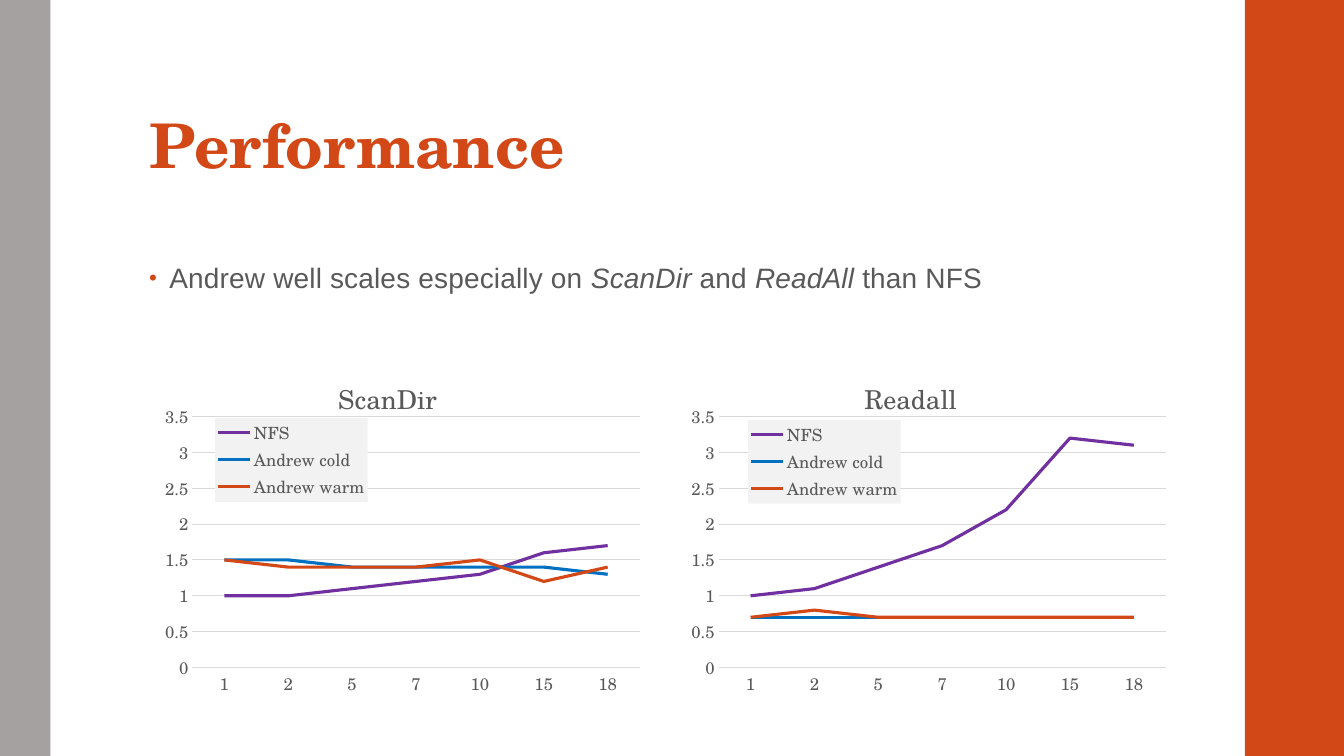
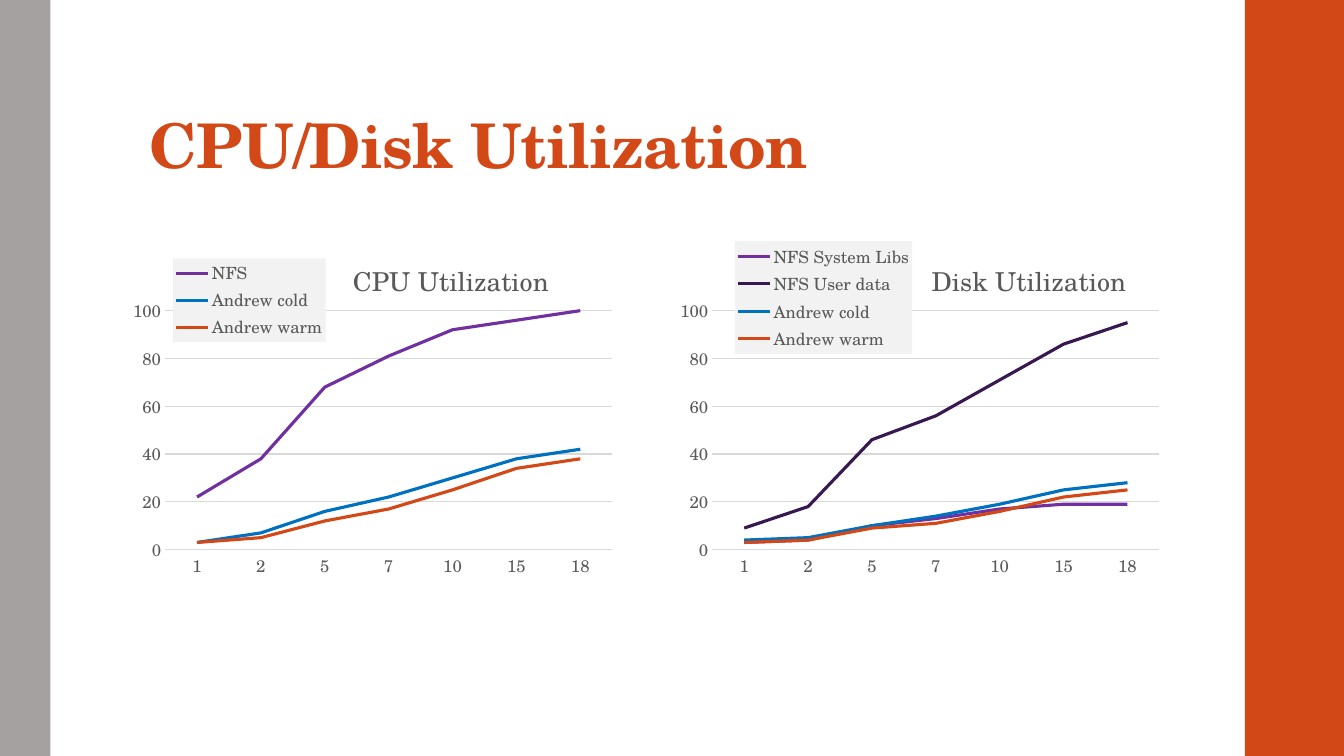
from lxml.etree import SubElement
from pptx import Presentation
from pptx.chart.data import CategoryChartData
from pptx.dml.color import RGBColor
from pptx.enum.chart import XL_CHART_TYPE, XL_LEGEND_POSITION, XL_TICK_MARK
from pptx.enum.shapes import MSO_SHAPE
from pptx.enum.text import MSO_ANCHOR
from pptx.oxml import parse_xml
from pptx.oxml.ns import qn
from pptx.util import Cm, Pt

ORANGE, GRAY, TEXT, GRID = "D34817", "A6A1A1", "595959", "D9D9D9"
PURPLE, DARK_PURPLE, BLUE = "7030A0", "381850", "0070C0"
SERIF, SANS = "TeX Gyre Schola", "Arial"
CHART_NS = "http://schemas.openxmlformats.org/drawingml/2006/chart"
DRAWING_NS = "http://schemas.openxmlformats.org/drawingml/2006/main"
LEGEND_FILL = (
    f'<c:spPr xmlns:c="{CHART_NS}" xmlns:a="{DRAWING_NS}">'
    '<a:solidFill><a:srgbClr val="F2F2F2"/></a:solidFill></c:spPr>'
)


def style(font, size, color=TEXT, name=SERIF):
    font.size = Pt(size)
    font.name = name
    font.color.rgb = RGBColor.from_string(color)


def set_layout(part, index, **fractions):
    for old in part.findall(qn("c:layout")):
        part.remove(old)
    layout = parse_xml(f'<c:layout xmlns:c="{CHART_NS}"/>')
    manual = SubElement(layout, qn("c:manualLayout"))
    if index == 0:
        SubElement(manual, qn("c:layoutTarget")).set("val", "inner")
    for axis in "xy":
        SubElement(manual, qn(f"c:{axis}Mode")).set("val", "edge")
    for key, value in fractions.items():
        SubElement(manual, qn(f"c:{key}")).set("val", str(value))
    part.insert(index, layout)


USERS = ["1", "2", "5", "7", "10", "15", "18"]
TITLE_Y = 0.04
SLIDES = [
    {
        "title": "Performance", "spacing": -10, "top": 9.02, "max": 3.5, "step": 0.5,
        "charts": [
            {
                "title": "ScanDir", "left": 3.1, "title_x": 0.4,
                "legend_at": (0.175, 0.165, 0.29, 0.23),
                "series": [
                    ("NFS", PURPLE, [1, 1, 1.1, 1.2, 1.3, 1.6, 1.7]),
                    ("Andrew cold", BLUE, [1.5, 1.5, 1.4, 1.4, 1.4, 1.4, 1.3]),
                    ("Andrew warm", ORANGE, [1.5, 1.4, 1.4, 1.4, 1.5, 1.2, 1.4]),
                ],
            },
            {
                "title": "Readall", "left": 16.36, "title_x": 0.4,
                "legend_at": (0.188, 0.17, 0.29, 0.23),
                "series": [
                    ("NFS", PURPLE, [1, 1.1, 1.4, 1.7, 2.2, 3.2, 3.1]),
                    ("Andrew cold", BLUE, [0.7] * 7),
                    ("Andrew warm", ORANGE, [0.7, 0.8, 0.7, 0.7, 0.7, 0.7, 0.7]),
                ],
            },
        ],
    },
    {
        "title": "CPU/Disk Utilization", "spacing": -50, "top": 6.05, "max": 105, "step": 20,
        "charts": [
            {
                "title": "CPU Utilization", "left": 2.41, "title_x": 0.48,
                "legend_at": (0.147, 0.05, 0.29, 0.23),
                "series": [
                    ("NFS", PURPLE, [22, 38, 68, 81, 92, 96, 100]),
                    ("Andrew cold", BLUE, [3, 7, 16, 22, 30, 38, 42]),
                    ("Andrew warm", ORANGE, [3, 5, 12, 17, 25, 34, 38]),
                ],
            },
            {
                "title": "Disk Utilization", "left": 16.2, "title_x": 0.54,
                "legend_at": (0.175, 0.003, 0.337, 0.31),
                "series": [
                    ("NFS System Libs", PURPLE, [3, 4, 10, 13, 17, 19, 19]),
                    ("NFS User data", DARK_PURPLE, [9, 18, 46, 56, 71, 86, 95]),
                    ("Andrew cold", BLUE, [4, 5, 10, 14, 19, 25, 28]),
                    ("Andrew warm", ORANGE, [3, 4, 9, 11, 16, 22, 25]),
                ],
            },
        ],
    },
]

prs = Presentation()
prs.slide_width, prs.slide_height = Cm(33.87), Cm(19.05)

for content in SLIDES:
    slide = prs.slides.add_slide(prs.slide_layouts[6])

    for left, width, color in [(31.37, 2.5, ORANGE), (0, 1.27, GRAY)]:
        band = slide.shapes.add_shape(MSO_SHAPE.RECTANGLE, Cm(left), 0, Cm(width), prs.slide_height)
        band.shadow.inherit = False
        band.fill.solid()
        band.fill.fore_color.rgb = RGBColor.from_string(color)
        band.line.fill.background()

    heading = slide.shapes.add_textbox(Cm(3.52), Cm(0.81), Cm(26.92), Cm(3.89)).text_frame
    heading.word_wrap = True
    heading.vertical_anchor = MSO_ANCHOR.BOTTOM
    heading.margin_top = Cm(0.08)
    title = heading.paragraphs[0]
    title.line_spacing = 0.9
    title_run = title.add_run()
    title_run.text = content["title"]
    title_run._r.get_or_add_rPr().set("spc", str(content["spacing"]))
    style(title.font, 44, ORANGE)
    title.font.bold = True

    for plan in content["charts"]:
        data = CategoryChartData()
        data.categories = USERS
        for name, color, values in plan["series"]:
            data.add_series(name, values)
        chart = slide.shapes.add_chart(
            XL_CHART_TYPE.LINE, Cm(plan["left"]), Cm(content["top"]), Cm(13.26), Cm(9.18), data
        ).chart
        style(chart.font, 12)

        chart.has_title = True
        caption = chart.chart_title.text_frame.paragraphs[0]
        caption.text = plan["title"]
        style(caption.font, 18.6)
        caption.font.bold = False

        chart.has_legend = True
        legend = chart.legend
        legend.position = XL_LEGEND_POSITION.RIGHT
        legend.include_in_layout = False
        style(legend.font, 12)
        legend._element.find(qn("c:txPr")).addprevious(parse_xml(LEGEND_FILL))

        users, scale = chart.category_axis, chart.value_axis
        for axis in (users, scale):
            axis.major_tick_mark = axis.minor_tick_mark = XL_TICK_MARK.NONE
            style(axis.tick_labels.font, 12)
        scale.minimum_scale = 0
        scale.maximum_scale = content["max"]
        scale.major_unit = content["step"]
        scale.format.line.fill.background()
        for line in (users.format.line, scale.major_gridlines.format.line):
            line.color.rgb = RGBColor.from_string(GRID)
            line.width = Pt(0.75)

        for series, (name, color, values) in zip(chart.plots[0].series, plan["series"]):
            series.smooth = False
            series.format.line.color.rgb = RGBColor.from_string(color)
            series.format.line.width = Pt(2.25)

        set_layout(chart.chart_title._element, 1, x=plan["title_x"], y=TITLE_Y)
        x, y, w, h = plan["legend_at"]
        set_layout(legend._element, 1, x=x, y=y, w=w, h=h)
        plot_area = chart._chartSpace.chart.plotArea
        set_layout(plot_area, 0, x=0.132, y=0.161, w=0.85, h=0.689)

body = prs.slides[0].shapes.add_textbox(Cm(3.51), Cm(6.5), Cm(26.57), Cm(1.2)).text_frame
body.word_wrap = True
finding = body.paragraphs[0]
finding.line_spacing = 0.95
style(finding.font, 20, TEXT, SANS)
for words, italic in [
    ("Andrew well scales especially on ", False),
    ("ScanDir", True),
    (" and ", False),
    ("ReadAll", True),
    (" than NFS", False),
]:
    run = finding.add_run()
    run.text = words
    run.font.italic = italic
    run._r.get_or_add_rPr().set("spc", "10")

bullet = finding._p.get_or_add_pPr()
bullet.set("marL", str(Cm(0.51)))
bullet.set("indent", str(-Cm(0.51)))
defaults = bullet.find(qn("a:defRPr"))
for xml in (
    f'<a:buClr xmlns:a="{DRAWING_NS}"><a:srgbClr val="{ORANGE}"/></a:buClr>',
    f'<a:buSzPct xmlns:a="{DRAWING_NS}" val="80000"/>',
    f'<a:buFont xmlns:a="{DRAWING_NS}" typeface="{SANS}"/>',
    f'<a:buChar xmlns:a="{DRAWING_NS}" char="•"/>',
):
    defaults.addprevious(parse_xml(xml))

prs.save("out.pptx")
